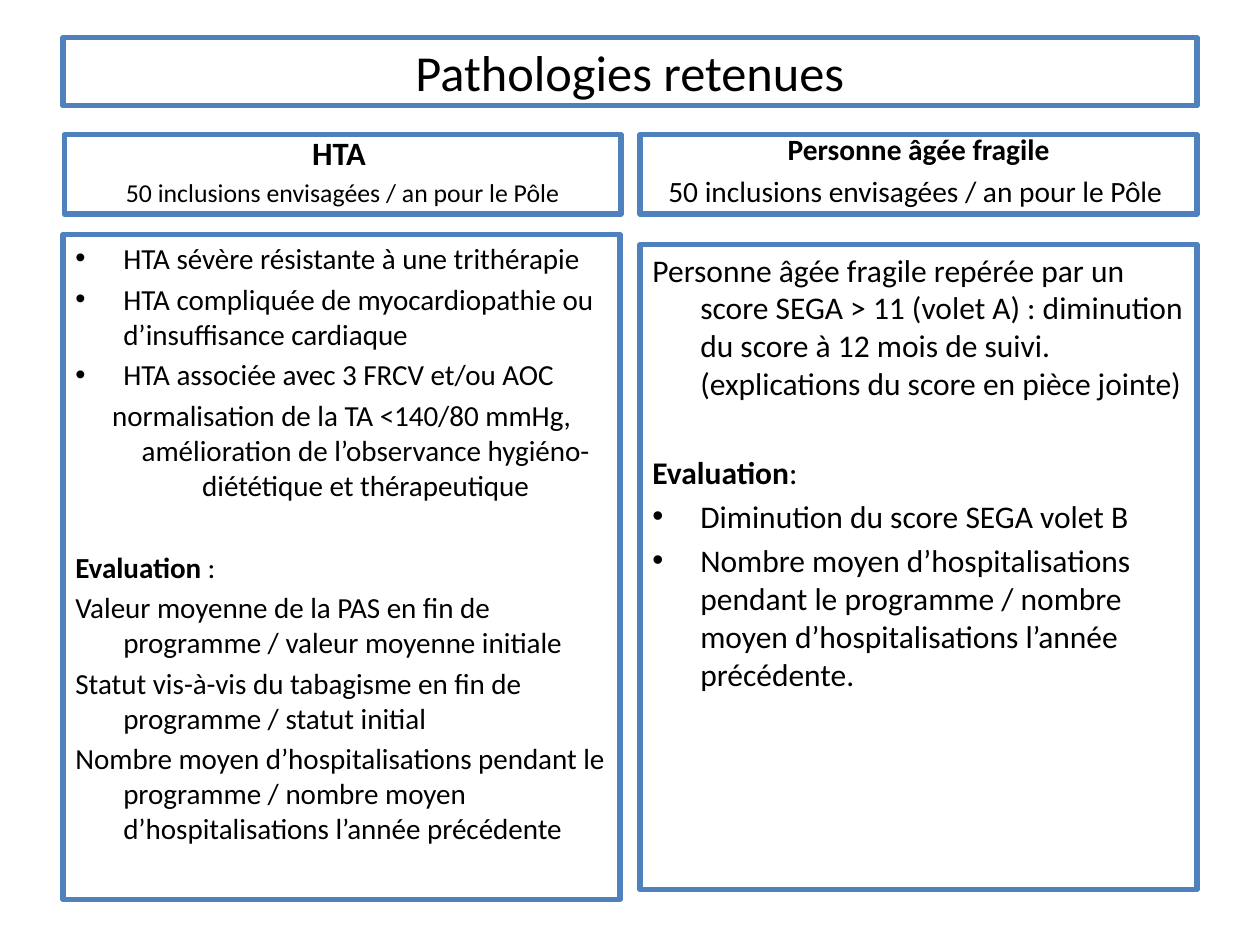
from dataclasses import dataclass

from lxml.etree import SubElement
from pptx import Presentation
from pptx.dml.color import RGBColor
from pptx.enum.shapes import MSO_SHAPE
from pptx.enum.text import MSO_ANCHOR, PP_ALIGN
from pptx.oxml.ns import qn
from pptx.util import Inches, Pt

BORDER = RGBColor(0x4F, 0x81, 0xBD)
INK = RGBColor(0x00, 0x00, 0x00)
FONT = "Calibri"
MARGIN = 0.5
COLUMN_WIDTH = 4.42
RIGHT_COLUMN = 10 - MARGIN - COLUMN_WIDTH
HEADER_TOP, HEADER_HEIGHT = 1.07, 0.63
HANGING = Inches(0.38)
SPACE_SHARE = 0.2
SECTION_SHARE = 1.62


@dataclass
class Entry:
    """One paragraph of a criteria box, as (text, bold) runs."""
    runs: list
    bullet: bool = False
    centred: bool = False
    section: bool = False


HYPERTENSION = [
    Entry([("HTA sévère résistante à une trithérapie", False)], bullet=True),
    Entry([("HTA compliquée de myocardiopathie ou d’insuffisance cardiaque", False)], bullet=True),
    Entry([("HTA associée avec 3 FRCV et/ou AOC", False)], bullet=True),
    Entry([("normalisation de la TA <140/80 mmHg, amélioration de l’observance "
            "hygiéno-diététique et thérapeutique", False)], centred=True),
    Entry([("Evaluation", True), (" :", False)], section=True),
    Entry([("Valeur moyenne de la PAS en fin de programme / valeur moyenne initiale", False)]),
    Entry([("Statut vis-à-vis du tabagisme en fin de programme / statut initial", False)]),
    Entry([("Nombre moyen d’hospitalisations pendant le programme / nombre moyen "
            "d’hospitalisations l’année précédente", False)]),
]

FRAIL_ELDERLY = [
    Entry([("Personne âgée fragile repérée par un score SEGA > 11 (volet A) : diminution du score "
            "à 12 mois de suivi. (explications du score en pièce jointe)", False)]),
    Entry([("Evaluation", True), (":", False)], section=True),
    Entry([("Diminution du score SEGA volet B", False)], bullet=True),
    Entry([("Nombre moyen d’hospitalisations pendant le programme / nombre moyen "
            "d’hospitalisations l’année précédente.", False)], bullet=True),
]


def add_frame(slide, box, anchor):
    """Draw an outlined box and return its text frame."""
    shape = slide.shapes.add_shape(MSO_SHAPE.RECTANGLE, *map(Inches, box))
    shape.shadow.inherit = False
    shape.fill.background()
    shape.line.color.rgb = BORDER
    shape.line.width = Pt(3)
    frame = shape.text_frame
    frame.word_wrap = True
    frame.vertical_anchor = anchor
    return frame


def add_paragraph(frame, runs, size, alignment, space_share=SPACE_SHARE):
    """Append a paragraph of (text, bold) runs, reusing the first empty one."""
    first = frame.paragraphs[0]
    is_first = not first.runs
    paragraph = first if is_first else frame.add_paragraph()
    paragraph.alignment = alignment
    paragraph.space_before = Pt(0 if is_first else size * space_share)
    for text, bold in runs:
        run = paragraph.add_run()
        run.text = text
        run.font.name = FONT
        run.font.size = Pt(size)
        run.font.bold = bold
        run.font.color.rgb = INK
    return paragraph


def hang(paragraph, bullet):
    """Give a paragraph a hanging indent and, if wanted, a bullet."""
    properties = paragraph._p.get_or_add_pPr()
    properties.set("marL", str(HANGING))
    properties.set("indent", str(-HANGING))
    if bullet:
        SubElement(properties, qn("a:buFont"), typeface="Arial")
        SubElement(properties, qn("a:buChar"), char="•")


def add_title(slide, box, text):
    """Place the slide title."""
    frame = add_frame(slide, box, MSO_ANCHOR.MIDDLE)
    add_paragraph(frame, [(text, False)], 28.8, PP_ALIGN.CENTER)


def add_header(slide, box, lines):
    """Place a column header, its first line bold."""
    frame = add_frame(slide, box, MSO_ANCHOR.BOTTOM)
    for index, (text, size) in enumerate(lines):
        add_paragraph(frame, [(text, index == 0)], size, PP_ALIGN.CENTER)


def add_criteria(slide, box, entries, size):
    """Place a column's list of criteria."""
    frame = add_frame(slide, box, MSO_ANCHOR.TOP)
    for entry in entries:
        alignment = PP_ALIGN.CENTER if entry.centred else PP_ALIGN.LEFT
        share = SECTION_SHARE if entry.section else SPACE_SHARE
        paragraph = add_paragraph(frame, entry.runs, size, alignment, share)
        hang(paragraph, entry.bullet)


def main():
    """Build and save the slide."""
    presentation = Presentation()
    presentation.slide_width, presentation.slide_height = Inches(10), Inches(7.5)
    slide = presentation.slides.add_slide(presentation.slide_layouts[6])
    add_title(slide, (MARGIN, 0.3, 10 - 2 * MARGIN, 0.54), "Pathologies retenues")
    add_header(slide, (MARGIN + 0.01, HEADER_TOP, COLUMN_WIDTH, HEADER_HEIGHT),
               [("HTA ", 18.6), ("50 inclusions envisagées / an pour le Pôle", 14.7)])
    add_criteria(slide, (MARGIN, 1.86, COLUMN_WIDTH, 5.28), HYPERTENSION, 16.6)
    add_header(slide, (RIGHT_COLUMN, HEADER_TOP, COLUMN_WIDTH, HEADER_HEIGHT),
               [("Personne âgée fragile", 16.8), ("50 inclusions envisagées / an pour le Pôle ", 16.8)])
    add_criteria(slide, (RIGHT_COLUMN, 1.94, COLUMN_WIDTH, 5.12), FRAIL_ELDERLY, 18)
    presentation.save("out.pptx")


if __name__ == "__main__":
    main()
